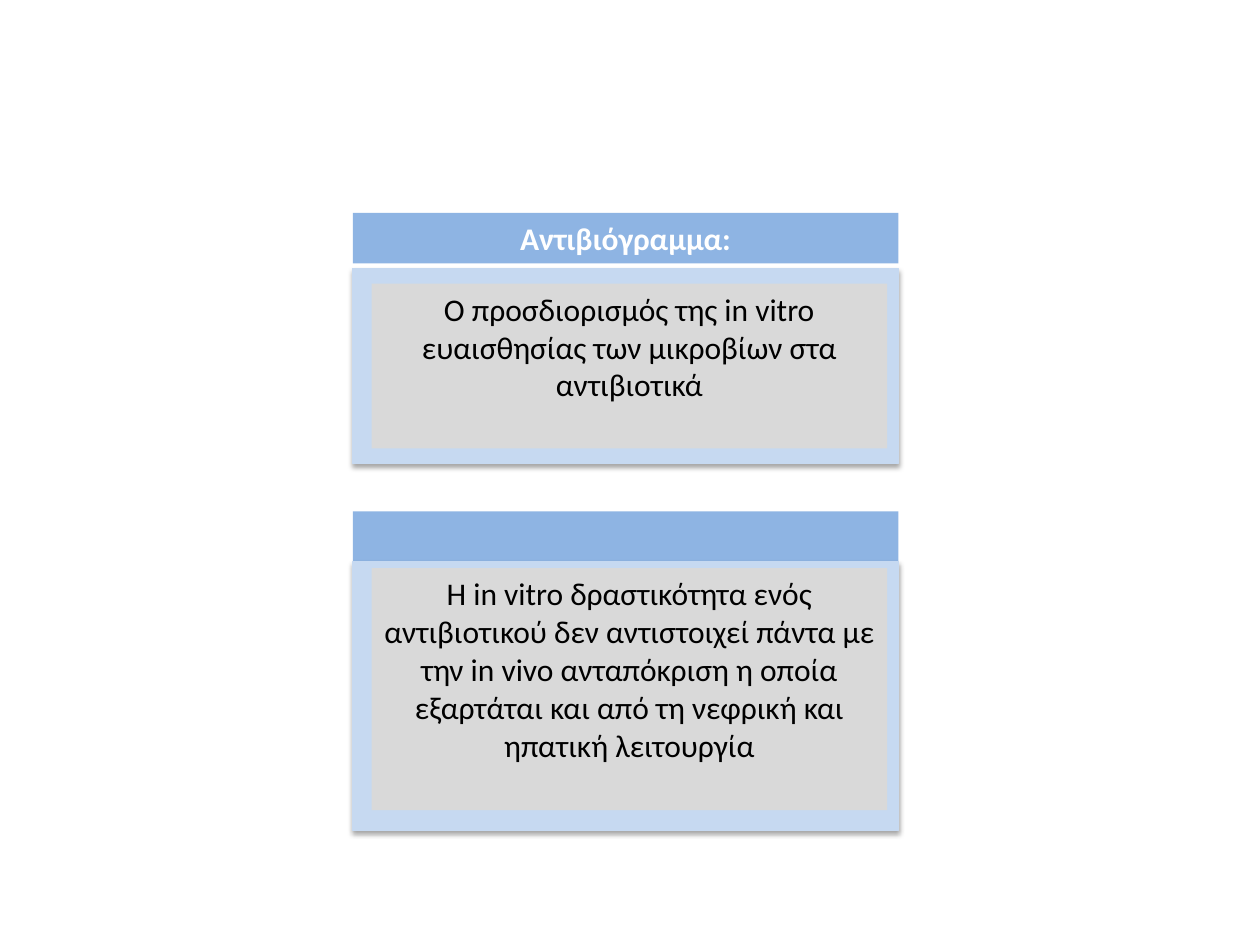
from dataclasses import dataclass

from lxml.etree import SubElement
from pptx import Presentation
from pptx.dml.color import RGBColor
from pptx.enum.shapes import MSO_SHAPE
from pptx.enum.text import MSO_ANCHOR, PP_ALIGN
from pptx.oxml.ns import qn
from pptx.util import Inches, Pt


@dataclass(frozen=True)
class Theme:
    font: str = "Calibri"
    size: int = 18
    header: str = "8EB4E3"
    panel: str = "C6D9F1"
    card: str = "D9D9D9"
    light: str = "FFFFFF"
    dark: str = "000000"


def write_text(shape, text, *, font, size, color, bold=False):
    frame = shape.text_frame
    frame.word_wrap = True
    frame.vertical_anchor = MSO_ANCHOR.TOP
    para = frame.paragraphs[0]
    para.alignment = PP_ALIGN.CENTER
    span = para.add_run()
    span.text = text
    span.font.name = font
    span.font.size = Pt(size)
    span.font.bold = bold
    span.font.color.rgb = RGBColor.from_string(color)


def add_soft_shadow(shape):
    """Cast a 35% black shadow straight down."""
    effects = shape._element.spPr.find(qn("a:effectLst"))
    shadow = SubElement(
        effects, qn("a:outerShdw"), blurRad=str(Pt(3.1)), dist=str(Pt(1.8)),
        dir="5400000", rotWithShape="0",
    )
    color = SubElement(shadow, qn("a:srgbClr"), val="000000")
    SubElement(color, qn("a:alpha"), val="35000")


class SlideBuilder:
    LEFT, WIDTH = 2.8, 4.33
    CARD_LEFT, CARD_WIDTH = 2.95, 4.09
    HEADER_HEIGHT = 0.4

    def __init__(self, slide, theme):
        self.slide = slide
        self.theme = theme

    def rectangle(self, shapes, left, top, width, height, fill):
        box = shapes.add_shape(
            MSO_SHAPE.RECTANGLE, Inches(left), Inches(top), Inches(width), Inches(height)
        )
        box.shadow.inherit = False
        box.fill.solid()
        box.fill.fore_color.rgb = RGBColor.from_string(fill)
        box.line.fill.background()
        return box

    def header(self, shapes, top, title):
        box = self.rectangle(
            shapes, self.LEFT, top, self.WIDTH, self.HEADER_HEIGHT, self.theme.header
        )
        if title:
            write_text(box, title, font=self.theme.font, size=self.theme.size,
                       color=self.theme.light, bold=True)

    def panel(self, shapes, top, height):
        box = self.rectangle(shapes, self.LEFT, top, self.WIDTH, height, self.theme.panel)
        box.line.color.rgb = RGBColor.from_string(self.theme.panel)
        box.line.width = Pt(0.75)
        add_soft_shadow(box)

    def card(self, shapes, top, height, text):
        box = self.rectangle(
            shapes, self.CARD_LEFT, top, self.CARD_WIDTH, height, self.theme.card
        )
        write_text(box, text, font=self.theme.font, size=self.theme.size,
                   color=self.theme.dark)

    def section(self, *, header_top, panel, card, text, title=None, grouped=False):
        """Stack a header, a panel and a text card; panel and card are (top, height)."""
        shapes = self.slide.shapes
        if grouped:
            shapes = shapes.add_group_shape().shapes
        self.header(shapes, header_top, title)
        self.panel(shapes, *panel)
        self.card(shapes, *card, text)


def main():
    deck = Presentation()
    deck.slide_width, deck.slide_height = Inches(10), Inches(7.5)
    page = deck.slides.add_slide(deck.slide_layouts[6])
    builder = SlideBuilder(page, Theme())
    builder.section(
        header_top=4.06, panel=(4.46, 2.13), card=(4.51, 1.92), grouped=True,
        text="Η in vitro δραστικότητα ενός αντιβιοτικού δεν αντιστοιχεί πάντα "
             "με την in vivo ανταπόκριση η οποία εξαρτάται και από τη νεφρική "
             "και ηπατική λειτουργία",
    )
    builder.section(
        header_top=1.69, panel=(2.13, 1.55), card=(2.25, 1.31), title="Αντιβιόγραμμα:",
        text="Ο προσδιορισμός της in vitro ευαισθησίας των μικροβίων στα αντιβιοτικά",
    )
    deck.save("out.pptx")


if __name__ == "__main__":
    main()
